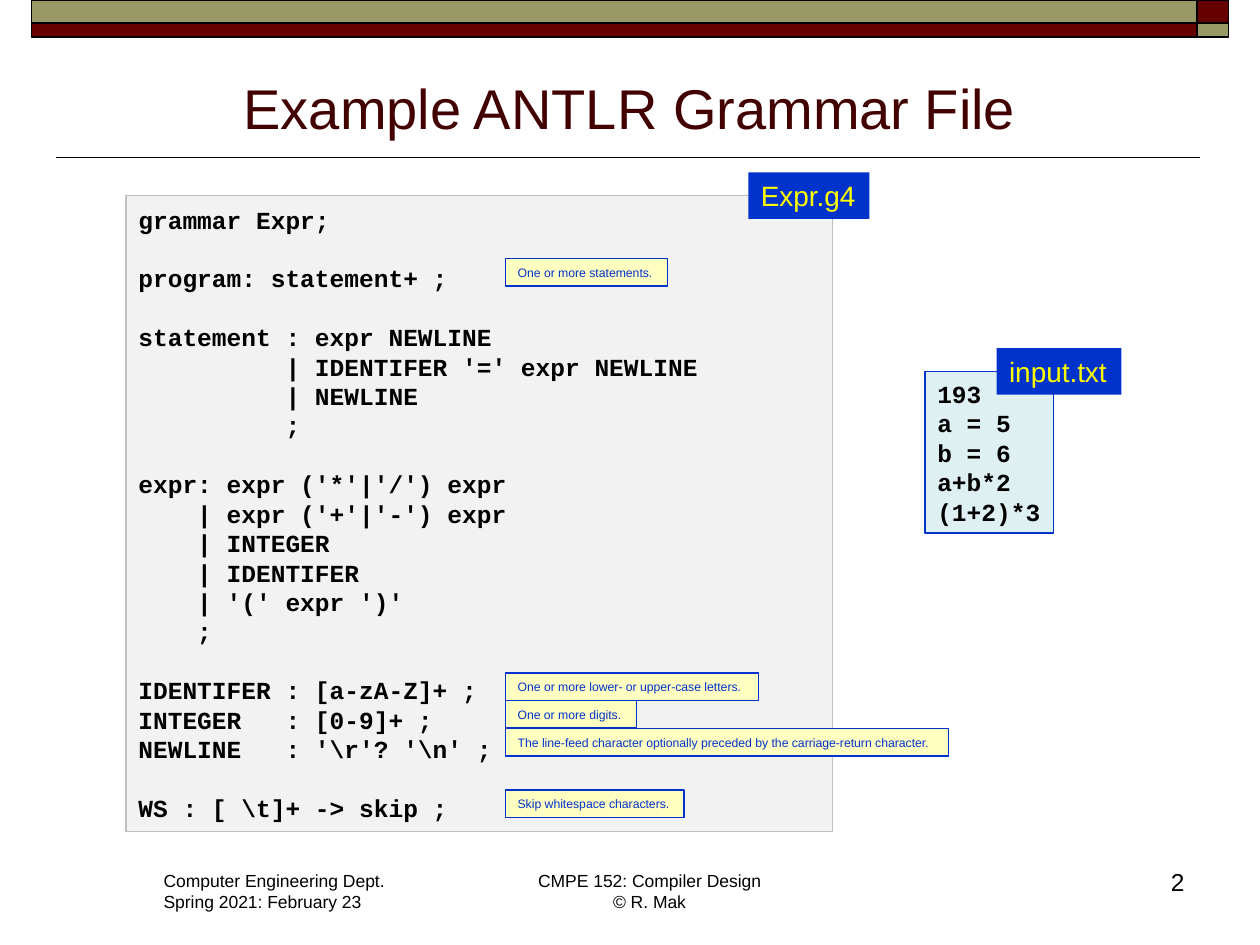
"""Build the slide that shows an example ANTLR grammar file."""
from dataclasses import dataclass

from lxml import etree
from pptx import Presentation
from pptx.dml.color import RGBColor
from pptx.enum.shapes import MSO_CONNECTOR, MSO_SHAPE
from pptx.enum.text import MSO_ANCHOR, MSO_AUTO_SIZE, PP_ALIGN
from pptx.oxml.ns import qn
from pptx.util import Pt

RECT, STRAIGHT = MSO_SHAPE.RECTANGLE, MSO_CONNECTOR.STRAIGHT
LEFT, CENTER, RIGHT = PP_ALIGN.LEFT, PP_ALIGN.CENTER, PP_ALIGN.RIGHT
TOP, MIDDLE, BOTTOM = MSO_ANCHOR.TOP, MSO_ANCHOR.MIDDLE, MSO_ANCHOR.BOTTOM
NO_AUTOSIZE = MSO_AUTO_SIZE.NONE
TITLE_ONLY = 5

GRAMMAR = r"""grammar Expr;

program: statement+ ;

statement : expr NEWLINE
          | IDENTIFER '=' expr NEWLINE
          | NEWLINE
          ;

expr: expr ('*'|'/') expr
    | expr ('+'|'-') expr
    | INTEGER
    | IDENTIFER
    | '(' expr ')'
    ;

IDENTIFER : [a-zA-Z]+ ;
INTEGER   : [0-9]+ ;
NEWLINE   : '\r'? '\n' ;

WS : [ \t]+ -> skip ;"""

INPUT = """193
a = 5
b = 6
a+b*2
(1+2)*3"""

NOTES = [
    (147.6, 92.9, "One or more statements."),
    (384.5, 144.7, "One or more lower- or upper-case letters."),
    (400.3, 74.9, "One or more digits."),
    (416.2, 253.4, "The line-feed character optionally preceded by "
                   "the carriage-return character."),
    (451.4, 102.2, "Skip whitespace characters."),
]


@dataclass(frozen=True)
class Theme:
    """Colours, fonts and type sizes of the deck."""
    sans: str = "Arial"
    mono: str = "Courier New"
    black: str = "000000"
    maroon: str = "660000"
    olive: str = "999966"
    title: str = "420000"
    blue: str = "0033CC"
    yellow: str = "FFFF00"
    note_fill: str = "FFFFC2"
    grammar_fill: str = "F2F2F2"
    grammar_line: str = "BFBFBF"
    input_fill: str = "DEF0F2"
    title_size: int = 32
    tag_size: int = 16
    code_size: int = 14
    number_size: int = 14
    footer_size: int = 10
    note_size: int = 7
    leading: float = 1.2


class Deck:
    """Draws elements on the current slide in the theme's style."""

    def __init__(self, prs, theme):
        self.theme = theme
        self.slide = prs.slides.add_slide(prs.slide_layouts[TITLE_ONLY])
        self.shapes = self.slide.shapes

    def style(self, p, size, color, font=None, bold=False):
        """Format every run of a paragraph."""
        for r in p.runs:
            r.font.size, r.font.bold = Pt(size), bold
            r.font.name = font or self.theme.sans
            r.font.color.rgb = RGBColor.from_string(color)

    def set_text(self, sp, text, size, color, font=None, bold=False,
                 align=LEFT, anchor=MIDDLE):
        """Fill a shape with lines; a blank line becomes space before the next."""
        tf = sp.text_frame
        tf.word_wrap, tf.auto_size, tf.vertical_anchor = True, NO_AUTOSIZE, anchor
        pitch = Pt(size * self.theme.leading)
        for i, block in enumerate(text.split("\n\n")):
            for j, line in enumerate(block.split("\n")):
                p = tf.add_paragraph() if i or j else tf.paragraphs[0]
                p.text, p.alignment, p.line_spacing = line, align, pitch
                if i and not j:
                    p.space_before = pitch
                self.style(p, size, color, font, bold)

    def title(self, text, x, y, w, h):
        """Set the title placeholder."""
        sp = self.shapes.title
        sp.left, sp.top, sp.width, sp.height = map(Pt, (x, y, w, h))
        self.set_text(sp, text, self.theme.title_size, self.theme.title,
                      align=CENTER, anchor=BOTTOM)

    def box(self, x, y, w, h, fill, line=None, weight=0.75):
        """Add a flat rectangle."""
        sp = self.shapes.add_shape(RECT, *map(Pt, (x, y, w, h)))
        sp.shadow.inherit = False
        sp.fill.solid()
        sp.fill.fore_color.rgb = RGBColor.from_string(fill)
        if line:
            sp.line.color.rgb = RGBColor.from_string(line)
            sp.line.width = Pt(weight)
        else:
            sp.line.fill.background()
        return sp

    def rule(self, x1, y1, x2, y2):
        """Add a thin black line."""
        sp = self.shapes.add_connector(STRAIGHT, *map(Pt, (x1, y1, x2, y2)))
        sp.line.color.rgb = RGBColor.from_string(self.theme.black)
        sp.line.width = Pt(1)
        etree.SubElement(sp._element.spPr, qn("a:effectLst"))

    def label(self, text, x, y, w, h, size, align=LEFT, anchor=MIDDLE):
        """Add a plain text box."""
        sp = self.shapes.add_textbox(*map(Pt, (x, y, w, h)))
        self.set_text(sp, text, size, self.theme.black, align=align, anchor=anchor)

    def code(self, text, x, y, w, h, fill, line):
        """Add a code listing."""
        self.set_text(self.box(x, y, w, h, fill, line), text,
                      self.theme.code_size, self.theme.black,
                      self.theme.mono, True)

    def tag(self, text, x, y, w):
        """Add a file name tag."""
        self.set_text(self.box(x, y, w, 26.6, self.theme.blue), text,
                      self.theme.tag_size, self.theme.yellow)

    def note(self, text, x, y, w):
        """Add a small explanatory note."""
        sp = self.box(x, y, w, 15.8, self.theme.note_fill, self.theme.blue)
        self.set_text(sp, text, self.theme.note_size, self.theme.blue)


def main():
    """Build and save the deck."""
    prs = Presentation()
    prs.slide_width, prs.slide_height = Pt(720), Pt(540)
    theme = Theme()
    deck = Deck(prs, theme)

    deck.rule(686, 90, 32, 90)
    for y, h, wide, narrow in ((0, 13, theme.olive, theme.maroon),
                               (13, 8, theme.maroon, theme.olive)):
        deck.box(18, y, 666, h, wide, theme.black, 1)
        deck.box(684, y, 18, h, narrow, theme.black, 1)
    deck.label("Computer Engineering Dept.\nSpring 2021: February 23",
               86.4, 493.2, 142, 31.7, theme.footer_size)
    deck.label("CMPE 152: Compiler Design\v© R. Mak",
               299.5, 493.2, 143.3, 31.7, theme.footer_size, CENTER)
    deck.title("Example ANTLR Grammar File", 36, 32.4, 648, 51.8)
    deck.label("2", 633.6, 491.8, 50.4, 36, theme.number_size, RIGHT, TOP)

    deck.code(GRAMMAR, 72, 111.6, 403.9, 363.6,
              theme.grammar_fill, theme.grammar_line)
    deck.tag("Expr.g4", 427.7, 98.6, 69.1)
    deck.code(INPUT, 528.5, 212.4, 73.5, 92.2, theme.input_fill, theme.blue)
    deck.tag("input.txt", 569.5, 198.9, 71.3)
    for y, w, text in NOTES:
        deck.note(text, 288.7, y, w)

    prs.save("out.pptx")


if __name__ == "__main__":
    main()
